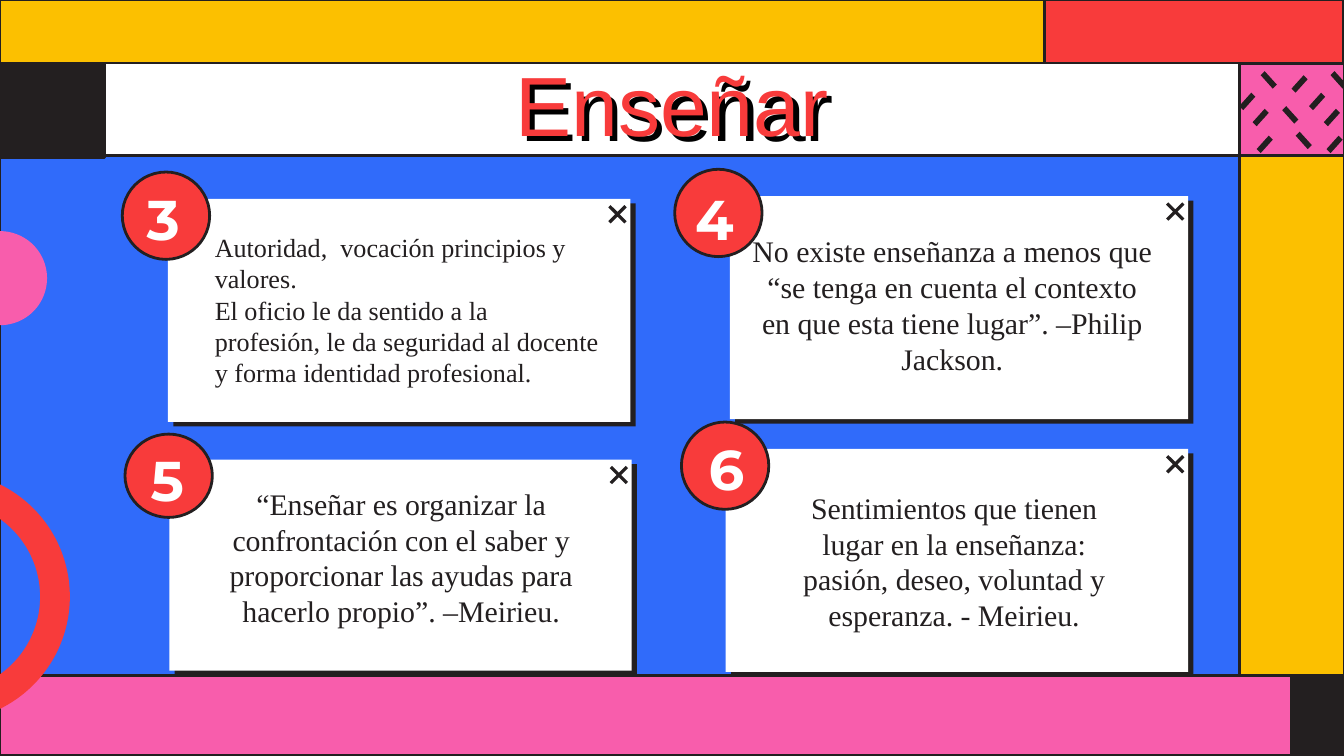
from dataclasses import dataclass

from lxml.etree import SubElement
from pptx import Presentation
from pptx.dml.color import RGBColor
from pptx.enum.shapes import MSO_SHAPE as Preset
from pptx.enum.text import MSO_ANCHOR as Anchor, PP_ALIGN as Align
from pptx.oxml.ns import qn
from pptx.util import Inches, Pt


@dataclass(frozen=True)
class Theme:
    ink: str = "231F20"
    black: str = "000000"
    white: str = "FFFFFF"
    blue: str = "306BFA"
    yellow: str = "FCC000"
    pink: str = "F85DAC"
    red: str = "F83B3B"
    title_font: str = "Arial"
    number_font: str = "Montserrat"
    body_font: str = "Times New Roman"
    title_size: float = 45
    number_size: float = 30
    body_size: float = 16
    small_size: float = 14
    outline: float = 1.5


THEME = Theme()


def write_text(frame, paragraphs, *, font, size, color, bold=False, align=Align.CENTER):
    frame.word_wrap = True
    frame.vertical_anchor = Anchor.MIDDLE
    frame.margin_left = frame.margin_right = Inches(0.1)
    frame.margin_top = frame.margin_bottom = Inches(0.1)
    for index, text in enumerate(paragraphs):
        paragraph = frame.add_paragraph() if index else frame.paragraphs[0]
        paragraph.alignment = align
        paragraph.line_spacing = 1.0
        run = paragraph.add_run()
        run.text = text
        run.font.name = font
        run.font.size = Pt(size)
        run.font.bold = bold
        run.font.color.rgb = RGBColor.from_string(color)


def add_hard_shadow(shape, color):
    """Give the shape an unblurred shadow to the lower right."""
    shape.shadow.inherit = False
    effects = shape._element.spPr.find(qn("a:effectLst"))
    shadow = SubElement(effects, qn("a:outerShdw"), blurRad="0", dist=str(Pt(3.8)),
                        dir=str(40 * 60000), algn="bl", rotWithShape="0")
    SubElement(shadow, qn("a:srgbClr"), val=color)


class SlideBuilder:
    def __init__(self, slide, theme):
        self.slide = slide
        self.theme = theme

    def paint(self, shape, fill, outlined=False):
        shape.shadow.inherit = False
        shape.fill.solid()
        shape.fill.fore_color.rgb = RGBColor.from_string(fill)
        if outlined:
            shape.line.color.rgb = RGBColor.from_string(self.theme.ink)
            shape.line.width = Pt(self.theme.outline)
        else:
            shape.line.fill.background()
        return shape

    def shape(self, preset, place, fill, outlined=False, adjustment=None):
        shape = self.slide.shapes.add_shape(preset, *map(Inches, place))
        if adjustment is not None:
            shape.adjustments[0] = adjustment
        return self.paint(shape, fill, outlined)

    def text(self, place, *paragraphs, **text_format):
        box = self.slide.shapes.add_textbox(*map(Inches, place))
        write_text(box.text_frame, paragraphs, **text_format)
        return box

    def dash(self, left, top, outline):
        points = [(Inches(left + x), Inches(top + y)) for x, y in outline]
        builder = self.slide.shapes.build_freeform(*points[0])
        builder.add_line_segments(points[1:], close=True)
        self.paint(builder.convert_to_shape(), self.theme.ink)

    def card(self, place, badge, number, number_at, text_place, paragraphs, **text_format):
        theme = self.theme
        left, top, width, _ = place
        panel = self.shape(Preset.RECTANGLE, place, theme.white)
        add_hard_shadow(panel, theme.ink)
        self.shape(Preset.MATH_MULTIPLY, (left + width - 0.21, top, 0.23, 0.23),
                   theme.ink, adjustment=0.105)
        self.shape(Preset.OVAL, badge, theme.red, outlined=True)
        self.text((*number_at, 0.65, 0.57), number, font=theme.number_font,
                  size=theme.number_size, color=theme.white, bold=True)
        body_format = {"font": theme.body_font, "size": theme.body_size,
                       "color": theme.ink, **text_format}
        self.text(text_place, *paragraphs, **body_format)


BANDS = [
    ((0, 1.16, 9.22, 3.87), THEME.blue),
    ((0, 0, 7.77, 0.47), THEME.yellow),
    ((9.22, 0.47, 0.78, 0.7), THEME.pink),
    ((0, 0.47, 0.78, 0.7), THEME.ink),
    ((0, 5.03, 9.61, 0.59), THEME.pink),
    ((9.61, 5.03, 0.39, 0.59), THEME.ink),
    ((7.77, 0, 2.23, 0.47), THEME.red),
    ((9.22, 1.16, 0.78, 3.87), THEME.yellow),
]

RISING_DASH = [(0.09, 0), (0, 0.1), (0.03, 0.13), (0.12, 0.03)]
FALLING_DASH = [(0.03, 0), (0, 0.03), (0.09, 0.13), (0.12, 0.1)]
DASHES = [
    (RISING_DASH, [(9.87, 1.01), (9.85, 0.81), (9.35, 1.01), (9.61, 0.56),
                   (9.74, 0.69), (9.32, 0.81), (9.22, 0.69)]),
    (FALLING_DASH, [(9.9, 0.53), (9.64, 0.98), (9.54, 0.79), (9.38, 0.53)]),
]

CARDS = [
    dict(number="3", place=(1.25, 1.48, 3.44, 1.66), badge=(0.91, 1.28, 0.65, 0.65),
         number_at=(0.89, 1.34), text_place=(1.5, 2.02, 3.06, 0.57),
         paragraphs=["Autoridad,  vocación principios y valores.",
                     "El oficio le da sentido a la profesión, le da seguridad al "
                     "docente y forma identidad profesional."],
         size=THEME.small_size, align=Align.LEFT),
    dict(number="4", place=(5.43, 1.46, 3.41, 1.66), badge=(5.02, 1.26, 0.65, 0.65),
         number_at=(4.99, 1.34), text_place=(5.49, 1.98, 3.19, 0.57),
         paragraphs=["No existe enseñanza a menos que “se tenga en cuenta el contexto "
                     "en que esta tiene lugar”. –Philip Jackson."]),
    dict(number="5", place=(1.26, 3.42, 3.44, 1.57), badge=(0.93, 3.23, 0.65, 0.62),
         number_at=(0.92, 3.28), text_place=(1.39, 3.86, 3.19, 0.57),
         paragraphs=["“Enseñar es organizar la confrontación con el saber y "
                     "proporcionar las ayudas para hacerlo propio”. –Meirieu."]),
    dict(number="6", place=(5.4, 3.34, 3.44, 1.66), badge=(5.07, 3.14, 0.65, 0.65),
         number_at=(5.08, 3.2), text_place=(5.73, 3.89, 2.74, 0.57),
         paragraphs=["Sentimientos que tienen lugar en la enseñanza: pasión, deseo, "
                     "voluntad y esperanza. - Meirieu."]),
]


def main():
    presentation = Presentation()
    presentation.slide_width = Inches(10)
    presentation.slide_height = Inches(10 * 9 / 16)
    slide = presentation.slides.add_slide(presentation.slide_layouts[6])
    builder = SlideBuilder(slide, THEME)

    for place, fill in BANDS:
        builder.shape(Preset.RECTANGLE, place, fill, outlined=True)
    title = builder.text((0.78, 0.47, 8.44, 0.59), "Enseñar", font=THEME.title_font,
                         size=THEME.title_size, color=THEME.red)
    add_hard_shadow(title, THEME.black)

    builder.shape(Preset.OVAL, (-0.35, 1.72, 0.7, 0.7), THEME.pink)
    builder.shape(Preset.DONUT, (-1.34, 3.51, 1.86, 1.86), THEME.red, adjustment=0.119)
    for outline, corners in DASHES:
        for left, top in corners:
            builder.dash(left, top, outline)
    for card in CARDS:
        builder.card(**card)

    presentation.save("out.pptx")


if __name__ == "__main__":
    main()
